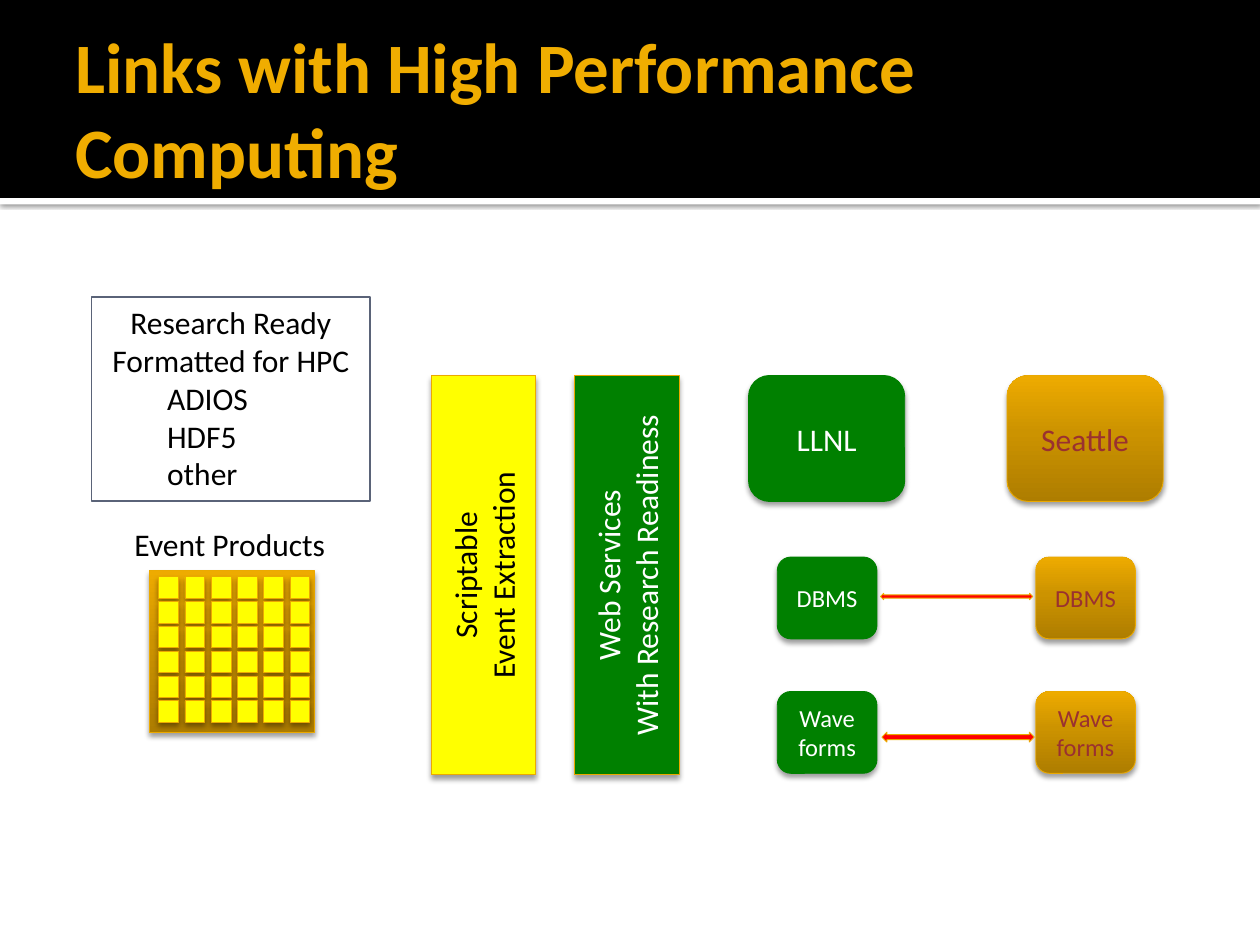
"""Build a slide on links between event products and high performance computing."""
from copy import deepcopy

from lxml import etree
from pptx import Presentation
from pptx.dml import color
from pptx.enum import shapes, text
from pptx.oxml import ns
from pptx.util import Cm, Pt

GOLD, GREEN, YELLOW, RED = "EBA900", "008000", "FFFF00", "FF0000"
WHITE, BLACK, BROWN = "FFFFFF", "000000", "9A3130"
RAMP = [(0, "AE7D00"), (0.55, "CC9300"), (1, "EEAB00")]
SOFT, BAND = (38, 3.1, 2), (60, 2.5, 0.8)
KIND = shapes.MSO_SHAPE
ALIGN, ANCHOR, FIT = text.PP_ALIGN, text.MSO_ANCHOR, text.MSO_AUTO_SIZE


def rgb(code):
    """Turn a hex string into a colour."""
    return color.RGBColor.from_string(code)


def write(frame, lines, size=18, ink=BLACK, bold=False, align=ALIGN.CENTER,
          anchor=ANCHOR.MIDDLE, wrap=True, fit=FIT.NONE, turn=None):
    """Fill a text frame with one paragraph per line."""
    frame.word_wrap, frame.auto_size = wrap, fit
    frame.vertical_anchor = anchor
    if turn:
        frame._txBody.bodyPr.set("vert", turn)
    frame.text = lines
    for para in frame.paragraphs:
        para.alignment = align
        font = para.runs[0].font
        font.name, font.size, font.bold = "Calibri", Pt(size), bold
        font.color.rgb = rgb(ink)


class Deck:
    """Hold the presentation, the current slide and its style."""

    def __init__(self, wide, high):
        """Open a title-only slide of the given size."""
        self.show = Presentation()
        self.show.slide_width, self.show.slide_height = Cm(wide), Cm(high)
        self.slide = self.show.slides.add_slide(self.show.slide_layouts[5])
        self.home = self.slide.shapes

    def group(self):
        """Start a new group of shapes."""
        return self.slide.shapes.add_group_shape().shapes

    def shade(self, shape, alpha, blur, dist):
        """Cast a black shadow straight down."""
        effect = shape.element.spPr.find(ns.qn("a:effectLst"))
        outer = etree.SubElement(effect, ns.qn("a:outerShdw"), blurRad=str(Pt(blur)),
                                 dist=str(Pt(dist)), dir="5400000", rotWithShape="0")
        tint = etree.SubElement(outer, ns.qn("a:srgbClr"), val=BLACK)
        etree.SubElement(tint, ns.qn("a:alpha"), val=str(alpha * 1000))

    def ramp(self, shape):
        """Fill a shape with the gold gradient, dark at the foot."""
        fill = shape.fill
        fill.gradient()
        fill.gradient_angle = 90
        stops = shape.element.spPr.find(".//" + ns.qn("a:gsLst"))
        stops.insert(1, deepcopy(stops[0]))
        for stop, (place, code) in zip(fill.gradient_stops, RAMP):
            stop.position, stop.color.rgb = place, rgb(code)

    def box(self, x, y, w, h, fill=None, line=GOLD, width=0.5, kind=KIND.RECTANGLE,
            shade=SOFT, lines=None, home=None, **form):
        """Draw a preset shape with optional text."""
        shape = (home or self.home).add_shape(kind, Cm(x), Cm(y), Cm(w), Cm(h))
        shape.shadow.inherit = False
        if shade:
            self.shade(shape, *shade)
        if fill == RAMP:
            self.ramp(shape)
        elif fill:
            shape.fill.solid()
            shape.fill.fore_color.rgb = rgb(fill)
        else:
            shape.fill.background()
        if line:
            shape.line.color.rgb, shape.line.width = rgb(line), Pt(width)
        else:
            shape.line.fill.background()
        if lines:
            write(shape.text_frame, lines, **form)
        return shape

    def label(self, x, y, w, h, lines, **form):
        """Place a plain text box."""
        shape = self.home.add_textbox(Cm(x), Cm(y), Cm(w), Cm(h))
        write(shape.text_frame, lines, **form)

    def title(self, lines):
        """Draw the header band and set the title on top of it."""
        self.box(0, 3.99, 25.4, 0.13, WHITE, None, shade=BAND)
        self.box(0, 0, 25.4, 3.99, BLACK, None, shade=None)
        head = self.home.title
        head.element.getparent().append(head.element)
        head.left, head.top, head.width, head.height = Cm(1.27), Cm(0.43), Cm(22.86), Cm(3.48)
        frame = head.text_frame
        frame.margin_left = Cm(0.25)
        frame.margin_right = frame.margin_top = frame.margin_bottom = Cm(0.13)
        write(frame, lines, size=40.5, ink="F0AD00", bold=True, align=ALIGN.LEFT)

    def site(self, x, name, **look):
        """Draw a site with its database and waveform stores."""
        look.update(kind=KIND.ROUNDED_RECTANGLE, home=self.group())
        self.box(x, 7.57, 3.15, 2.54, lines=name, **look)
        for y, lines in ((11.23, "DBMS"), (13.94, "Wave\nforms")):
            self.box(x + 0.58, y, 2.01, 1.65, lines=lines, size=14, **look)

    def grid(self, x, y, count):
        """Draw the event products as a tray of square cells."""
        home = self.group()
        self.box(x, y, 3.33, 3.25, RAMP, home=home)
        for row in range(count):
            for col in range(count):
                self.box(x + 0.18 + 0.53 * col, y + 0.12 + 0.5 * row, 0.4, 0.43,
                         YELLOW, home=home)

    def formats(self, lines, first):
        """List the research formats, indented from the given line on."""
        shape = self.box(1.85, 5.99, 5.61, 4.11, line="5A6378", width=0.75, shade=None,
                         lines=lines, anchor=ANCHOR.TOP, fit=FIT.SHAPE_TO_FIT_TEXT)
        for para in shape.text_frame.paragraphs[first:]:
            para.alignment = ALIGN.LEFT
            para._p.get_or_add_pPr().set("marL", str(Cm(1.27)))


def main():
    """Build and save the slide."""
    deck = Deck(25.4, 19.05)
    deck.title("Links with High Performance Computing")
    deck.site(15.09, "LLNL", fill=GREEN, line=GREEN, ink=WHITE)
    deck.site(20.3, "Seattle", fill=RAMP, ink=BROWN)
    for x, y, high in ((17.75, 11.96, 0.13), (17.78, 14.76, 0.2)):
        deck.box(x, y, 3.07, high, RED, kind=KIND.LEFT_RIGHT_ARROW, shade=None)
    for x, fill, ink, lines in (
            (11.58, GREEN, WHITE, "Web Services\nWith Research Readiness"),
            (8.69, YELLOW, BLACK, "Scriptable\nEvent Extraction")):
        deck.box(x, 7.57, 2.11, 8.05, fill, lines=lines, ink=ink, turn="vert270")
    deck.grid(3.02, 11.51, 6)
    deck.label(2.46, 10.46, 4.42, 1.02, "Event Products", align=ALIGN.LEFT,
               anchor=ANCHOR.TOP, wrap=False, fit=FIT.SHAPE_TO_FIT_TEXT)
    deck.formats("Research Ready\nFormatted for HPC\nADIOS\nHDF5\nother", 2)
    deck.show.save("out.pptx")


if __name__ == "__main__":
    main()
